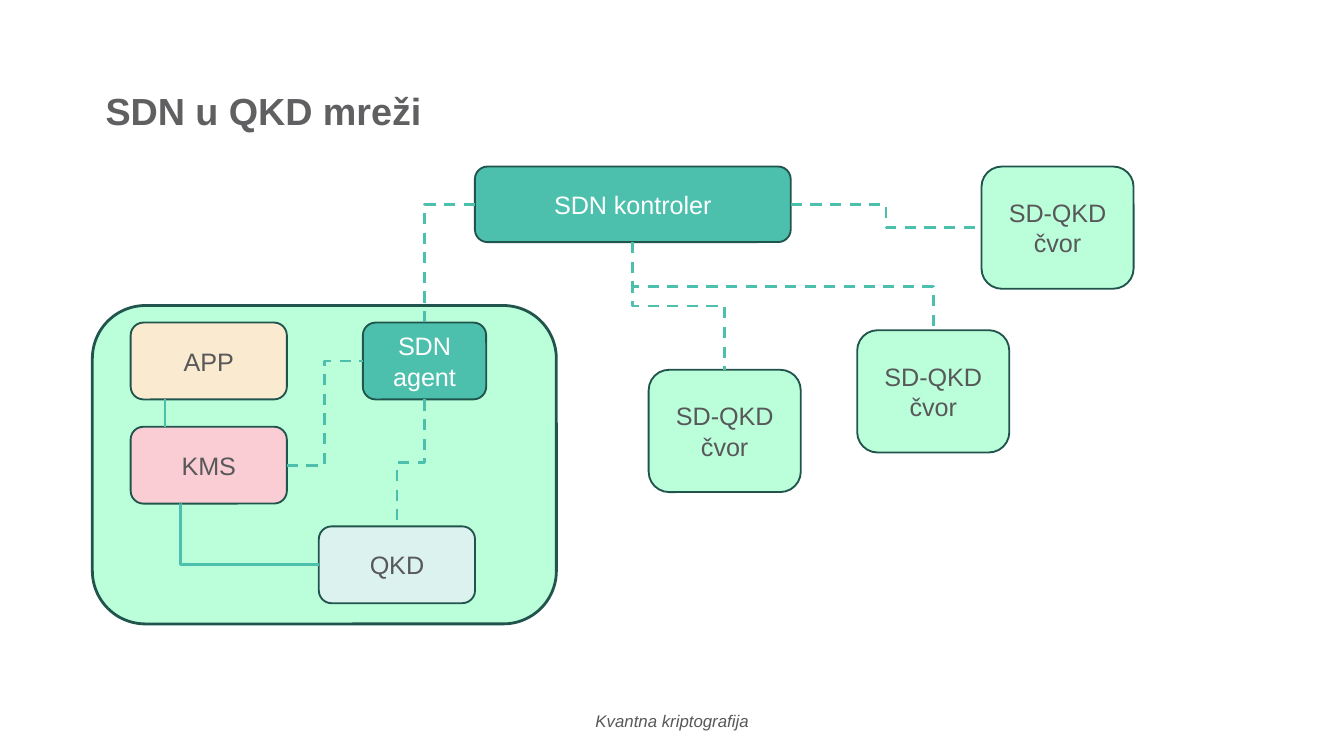
from lxml import etree
from pptx import Presentation
from pptx.dml.color import RGBColor
from pptx.enum.dml import MSO_LINE as Dash
from pptx.enum.shapes import MSO_CONNECTOR as Conn, MSO_SHAPE as Shape
from pptx.enum.text import MSO_ANCHOR as Anchor, PP_ALIGN as Align
from pptx.oxml.ns import qn
from pptx.util import Pt

WHITE = RGBColor(0xFF, 0xFF, 0xFF)
TEAL = RGBColor(0x4C, 0xC0, 0xAD)
DARK = RGBColor(0x21, 0x54, 0x4C)
MINT = RGBColor(0xBB, 0xFF, 0xDA)
CREAM = RGBColor(0xFA, 0xEA, 0xD0)
PINK = RGBColor(0xFA, 0xCD, 0xD5)
PALE = RGBColor(0xDB, 0xF2, 0xEF)
GRAY = RGBColor(0x58, 0x58, 0x5A)
TITLE = RGBColor(0x60, 0x60, 0x62)

# Content: name -> text, left, top, width, height, fill
NODE = "SD-QKD čvor"
BOXES = {
    "group": ("", 49.5, 163.7, 248.6, 170.6, MINT),
    "control": ("SDN kontroler", 254.4, 89.2, 169.2, 40.5, TEAL),
    "low": (NODE, 347.5, 198.1, 81.5, 65.5, MINT),
    "mid": (NODE, 459.2, 176.9, 81.5, 65.5, MINT),
    "high": (NODE, 525.8, 89.2, 81.5, 65.5, MINT),
    "agent": ("SDN agent", 194.4, 172.8, 66.1, 41.2, TEAL),
    "app": ("APP", 70, 172.8, 83.7, 41.2, CREAM),
    "kms": ("KMS", 70, 228.6, 83.7, 41.2, PINK),
    "qkd": ("QKD", 170.8, 282, 83.7, 41.2, PALE),
}

# Links: (box, side, share along side) at both ends, route, dashed
LINKS = [
    (("control", "bottom", 0.5), ("low", "top", 0.5), "down", True),
    (("control", "bottom", 0.5), ("mid", "top", 0.5), "down", True),
    (("control", "right", 0.5), ("high", "left", 0.5), "across", True),
    (("control", "left", 0.5), ("agent", "top", 0.5), "corner", True),
    (("agent", "bottom", 0.5), ("qkd", "top", 0.5), "down", True),
    (("kms", "bottom", 0.32), ("qkd", "left", 0.5), "drop", False),
    (("app", "bottom", 0.22), ("kms", "top", 0.22), "straight", False),
    (("kms", "right", 0.5), ("agent", "left", 0.5), "across", True),
]


def style(frame, size, color, align=Align.CENTER, bold=False, italic=False):
    frame.word_wrap = True
    frame.vertical_anchor = Anchor.MIDDLE
    para = frame.paragraphs[0]
    para.alignment = align
    for run in para.runs:
        font = run.font
        font.name, font.size, font.color.rgb = "Arial", Pt(size), color
        font.bold, font.italic = bold, italic


def add_label(text, left, top, width, height, *look, **more):
    box = slide.shapes.add_textbox(Pt(left), Pt(top), Pt(width), Pt(height))
    box.text_frame.text = text
    style(box.text_frame, *look, **more)
    return box


def add_box(name):
    text, left, top, width, height, fill = BOXES[name]
    box = slide.shapes.add_shape(Shape.ROUNDED_RECTANGLE, Pt(left), Pt(top),
                                 Pt(width), Pt(height))
    box.shadow.inherit = False
    box.fill.solid()
    box.fill.fore_color.rgb = fill
    box.line.color.rgb = DARK
    box.line.width = Pt(1 if text else 1.5)
    if text:
        box.text_frame.text = text
        style(box.text_frame, 13.5, WHITE if fill == TEAL else GRAY)


def port(name, side, share):
    _, left, top, width, height, _ = BOXES[name]
    if side in ("top", "bottom"):
        return left + width * share, top + height * (side == "bottom")
    return left + width * (side == "right"), top + height * share


def add_link(start, end, route, dashed):
    (x1, y1), (x2, y2) = port(*start), port(*end)
    wide, high = abs(x2 - x1), abs(y2 - y1)
    midx, midy = (x1 + x2) / 2, (y1 + y2) / 2
    turn, flip = 0, None
    if route == "down":  # vertical first: a turned elbow
        wide, high = high, wide
        turn, flip = (270, "flipH") if x2 > x1 else (90, None)
    elif route == "corner":  # left, then down
        turn, flip = 180, "flipV"
    elif y2 < y1:
        flip = "flipV"

    kind = Conn.STRAIGHT if route == "straight" else Conn.ELBOW
    left, top = midx - wide / 2, midy - high / 2
    link = slide.shapes.add_connector(kind, Pt(left), Pt(top),
                                      Pt(left + wide), Pt(top + high))
    link.line.color.rgb = TEAL
    link.line.width = Pt(1.5)
    if dashed:
        link.line.dash_style = Dash.DASH

    props = link._element.spPr
    etree.SubElement(props, qn("a:effectLst"))
    frame, geom = props.find(qn("a:xfrm")), props.find(qn("a:prstGeom"))
    if turn:
        frame.set("rot", str(turn * 60000))
    if flip:
        frame.set(flip, "1")
    if route == "corner":
        geom.set("prst", "bentConnector2")
    if route == "drop":  # bend at the very start
        guides = geom.find(qn("a:avLst"))
        if guides is None:
            guides = etree.SubElement(geom, qn("a:avLst"))
        etree.SubElement(guides, qn("a:gd"), name="adj1", fmla="val 100")


deck = Presentation()
deck.slide_width, deck.slide_height = Pt(720), Pt(405)
slide = deck.slides.add_slide(deck.slide_layouts[6])

# Title and footer
title = add_label("SDN u QKD mreži", 49.5, 21.6, 621, 78.3, 20.2, TITLE,
                  Align.LEFT, bold=True)
title.text_frame.paragraphs[0].line_spacing = 0.9
add_label("Kvantna kriptografija", 162.5, 375.4, 395, 21.6, 9, GRAY,
          italic=True)

# Diagram
for name in BOXES:
    add_box(name)
for link in LINKS:
    add_link(*link)

deck.save("out.pptx")
